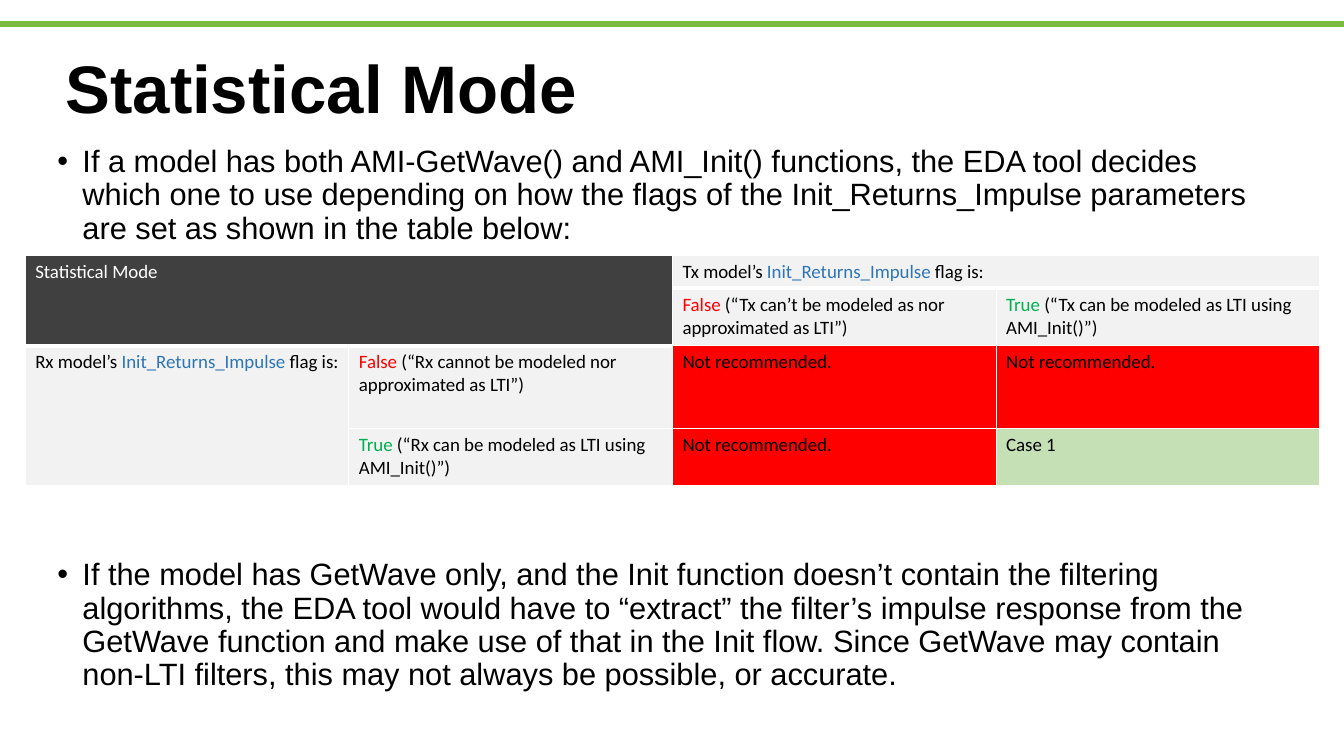
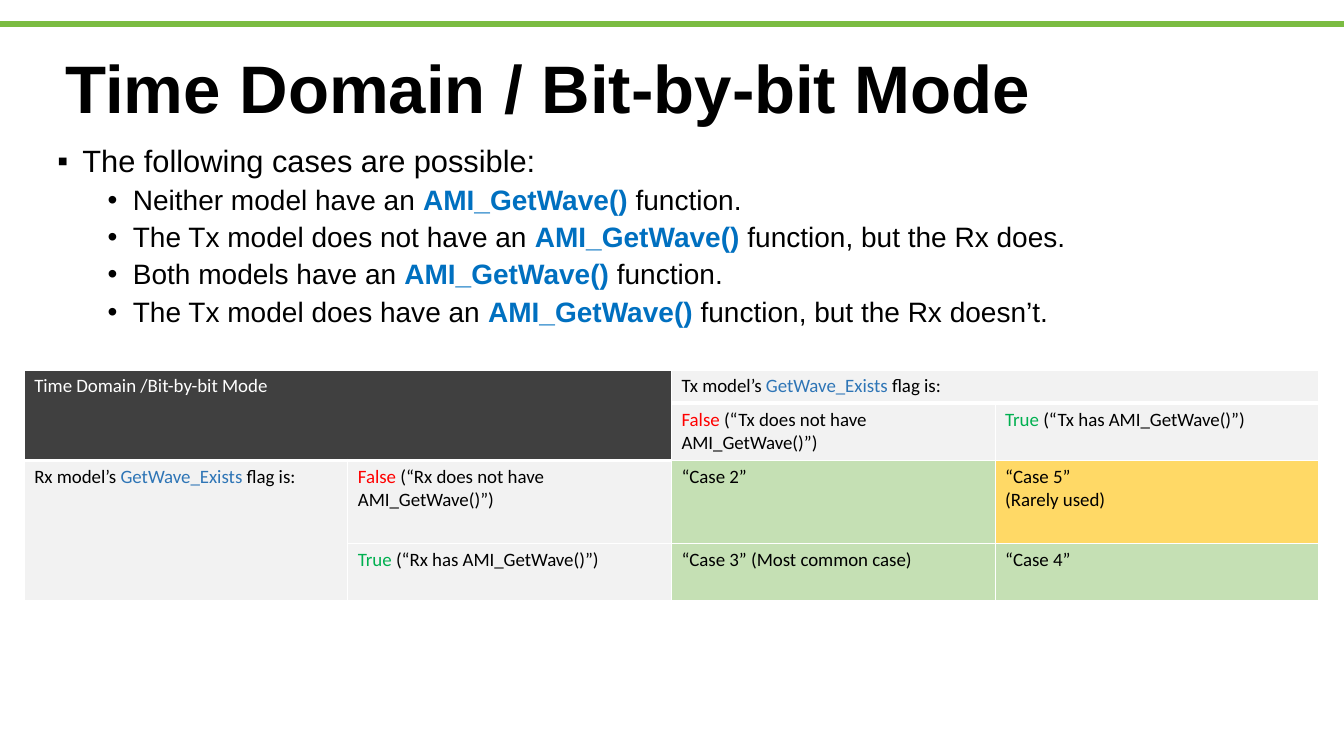
from pptx import Presentation
from pptx.dml.color import RGBColor
from pptx.enum.text import MSO_ANCHOR, MSO_AUTO_SIZE, PP_ALIGN
from pptx.oxml.ns import qn
from pptx.util import Inches, Pt
from lxml.etree import SubElement

COLORS = {
    "black": "000000",
    "white": "FFFFFF",
    "band": "7BBC42",
    "function": "0070C0",
    "flag": "2E75B6",
    "false": "FF0000",
    "true": "00B050",
    "corner": "404040",
    "label": "F2F2F2",
    "rejected": "FF0000",
    "accepted": "C5E0B4",
    "rare": "FFD966",
}
ROW_HEIGHTS = (0.33, 0.57, 0.82, 0.57)
COLUMN_WIDTH = 3.21
BODY_LEFT, BODY_WIDTH = 0.47, 12.36


def rgb(name):
    return RGBColor.from_string(COLORS[name])


def add_run(paragraph, text, size=22, font="Arial", color="black", bold=False):
    run = paragraph.add_run()
    run.text = text
    run.font.size = Pt(size)
    run.font.name = font
    run.font.bold = bold
    run.font.color.rgb = rgb(color)


def add_band(slide):
    band = slide.shapes.add_connector(1, Inches(-0.02), Inches(0.24), Inches(13.33), Inches(0.24))
    band.line.color.rgb = rgb("band")
    band.line.width = Pt(4.5)
    SubElement(band._element.spPr, qn("a:effectLst"))


def add_titled_slide(deck, heading):
    slide = deck.slides.add_slide(deck.slide_layouts[5])
    add_band(slide)
    title = slide.shapes.title
    title.left, title.top = Inches(0.55), Inches(0.35)
    title.width, title.height = Inches(12.32), Inches(1.13)
    frame = title.text_frame
    frame.auto_size = MSO_AUTO_SIZE.NONE
    frame.vertical_anchor = MSO_ANCHOR.MIDDLE
    paragraph = frame.paragraphs[0]
    paragraph.alignment = PP_ALIGN.LEFT
    paragraph.line_spacing = 0.9
    add_run(paragraph, heading, size=48, bold=True)
    return slide


def set_bullet(paragraph, mark, indent):
    properties = paragraph._p.get_or_add_pPr()
    properties.set("marL", str(Inches(indent)))
    properties.set("indent", str(Inches(-0.25)))
    SubElement(properties, qn("a:buFont"), typeface="Arial")
    SubElement(properties, qn("a:buChar"), char=mark)


def add_bullets(slide, top, height, bullets):
    box = slide.shapes.add_textbox(
        Inches(BODY_LEFT), Inches(top), Inches(BODY_WIDTH), Inches(height))
    frame = box.text_frame
    frame.word_wrap = True
    for index, (level, mark, parts) in enumerate(bullets):
        paragraph = frame.add_paragraph() if index else frame.paragraphs[0]
        paragraph.level = level
        set_bullet(paragraph, mark, 0.25 + 0.5 * level)
        paragraph.line_spacing = 0.9
        if index:
            paragraph.space_before = Pt(5)
        for text, color in parts:
            add_run(paragraph, text, size=22 - 2 * level, color=color,
                    bold=color == "function")


def set_border(cell, side, width):
    line = SubElement(cell._tc.get_or_add_tcPr(), qn(f"a:{side}"), w=str(Pt(width)))
    fill = SubElement(line, qn("a:solidFill"))
    SubElement(fill, qn("a:srgbClr"), val=COLORS["white"])


def fill_cell(cell, fill, paragraphs):
    cell.fill.solid()
    cell.fill.fore_color.rgb = rgb(fill)
    for index, parts in enumerate(paragraphs):
        paragraph = cell.text_frame.add_paragraph() if index else cell.text_frame.paragraphs[0]
        for text, color in parts:
            add_run(paragraph, text, size=13.5, font="Calibri", color=color)


def add_flag_table(slide, left, top, mode, flag, tx_notes, rx_notes, outcomes):
    size = len(ROW_HEIGHTS)
    table = slide.shapes.add_table(
        size, size, Inches(left), Inches(top),
        Inches(COLUMN_WIDTH * size), Inches(sum(ROW_HEIGHTS))).table
    for column in table.columns:
        column.width = Inches(COLUMN_WIDTH)
    for row, height in zip(table.rows, ROW_HEIGHTS):
        row.height = Inches(height)
    for row in range(size):
        for column in range(size):
            cell = table.cell(row, column)
            under_header = row == 0 or (row == 1 and column < 2)
            for side in ("lnL", "lnR", "lnT"):
                set_border(cell, side, 1)
            set_border(cell, "lnB", 3 if under_header else 1)
            fill_cell(cell, "corner" if row < 2 and column < 2 else "label", [])
    for first, last in (((0, 0), (1, 1)), ((0, 2), (0, 3)), ((2, 0), (3, 0))):
        table.cell(*first).merge(table.cell(*last))

    fill_cell(table.cell(0, 0), "corner", [[(mode, "white")]])
    for side, position in (("Tx", (0, 2)), ("Rx", (2, 0))):
        fill_cell(table.cell(*position), "label", [[
            (f"{side} model’s ", "black"), (f"{flag} ", "flag"), ("flag is:", "black")]])
    for index, state in enumerate(("False", "True")):
        for position, note in (((1, 2 + index), tx_notes[index]),
                               ((2 + index, 1), rx_notes[index])):
            fill_cell(table.cell(*position), "label", [[
                (state, state.lower()), (f" (“{note}”)", "black")]])
    for row, pair in enumerate(outcomes, start=2):
        for column, (fill, *lines) in enumerate(pair, start=2):
            fill_cell(table.cell(row, column), fill, [[(line, "black")] for line in lines])


def build_statistical(deck):
    slide = add_titled_slide(deck, "Statistical Mode")
    add_bullets(slide, 1.4, 1.1, [(0, "•", [(
        "If a model has both AMI-GetWave() and AMI_Init() functions, the EDA tool decides "
        "which one to use depending on how the flags of the Init_Returns_Impulse parameters "
        "are set as shown in the table below:", "black")])])
    add_bullets(slide, 5.5, 1.45, [(0, "•", [(
        "If the model has GetWave only, and the Init function doesn’t contain the filtering "
        "algorithms, the EDA tool would have to “extract” the filter’s impulse response from "
        "the GetWave function and make use of that in the Init flow. Since GetWave may contain "
        "non-LTI filters, this may not always be possible, or accurate.", "black")])])
    rejected = ("rejected", "Not recommended.")
    add_flag_table(
        slide, 0.25, 2.53, "Statistical Mode", "Init_Returns_Impulse",
        ("Tx can’t be modeled as nor approximated as LTI",
         "Tx can be modeled as LTI using AMI_Init()"),
        ("Rx cannot be modeled nor approximated as LTI",
         "Rx can be modeled as LTI using AMI_Init()"),
        ((rejected, rejected), (rejected, ("accepted", "Case 1"))))


def build_time_domain(deck):
    slide = add_titled_slide(deck, "Time Domain / Bit-by-bit Mode")
    cases = (
        ("Neither model have an ", "function."),
        ("The Tx model does not have an ", "function, but the Rx does."),
        ("Both models have an ", "function."),
        ("The Tx model does have an ", "function, but the Rx doesn’t."),
    )
    bullets = [(0, "▪", [("The following cases are possible:", "black")])]
    bullets += [
        (1, "•", [(start, "black"), ("AMI_GetWave() ", "function"), (end, "black")])
        for start, end in cases]
    add_bullets(slide, 1.4, 2.0, bullets)
    add_flag_table(
        slide, 0.24, 3.67, "Time Domain /Bit-by-bit Mode", "GetWave_Exists",
        ("Tx does not have AMI_GetWave()", "Tx has AMI_GetWave()"),
        ("Rx does not have AMI_GetWave()", "Rx has AMI_GetWave()"),
        ((("accepted", "“Case 2”"), ("rare", "“Case 5”", "(Rarely used)")),
         (("accepted", "“Case 3” (Most common case)"), ("accepted", "“Case 4”"))))


def main():
    deck = Presentation()
    deck.slide_width, deck.slide_height = Inches(13.33), Inches(7.5)
    build_statistical(deck)
    build_time_domain(deck)
    deck.save("out.pptx")


if __name__ == "__main__":
    main()
